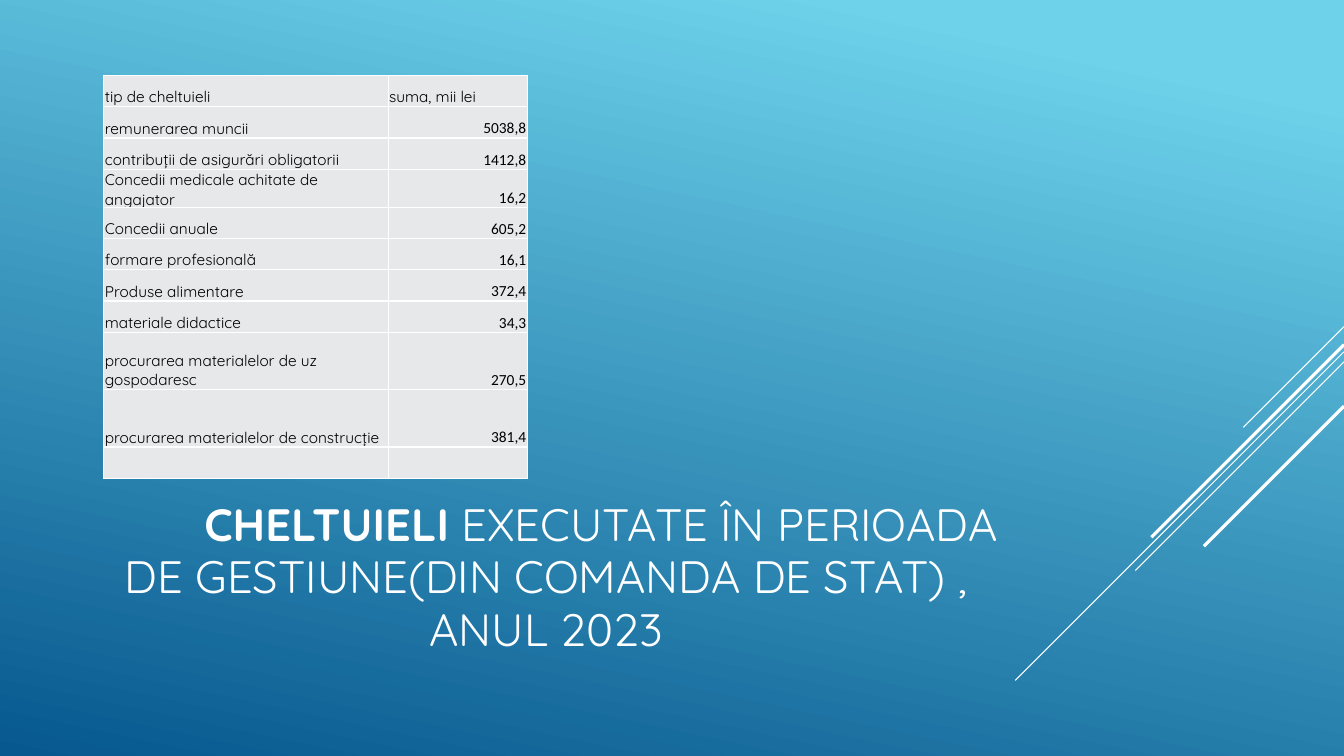
from lxml.etree import SubElement
from pptx import Presentation
from pptx.dml.color import RGBColor
from pptx.enum.shapes import MSO_CONNECTOR
from pptx.enum.text import MSO_ANCHOR, PP_ALIGN
from pptx.oxml.ns import qn
from pptx.util import Pt

PX = 9144
WHITE = RGBColor(0xFF, 0xFF, 0xFF)
BLACK = RGBColor(0, 0, 0)
CELL_GREY = RGBColor(0xE7, 0xE8, 0xEA)
SKY = RGBColor(0x6E, 0xD2, 0xEB)
DEEP_BLUE = RGBColor(0x06, 0x58, 0x8E)

EXPENSES = [
    ("tip de cheltuieli", "suma, mii lei"),
    ("remunerarea muncii", "5038,8"),
    ("contribuții de asigurări obligatorii", "1412,8"),
    ("Concedii medicale achitate de angajator", "16,2"),
    ("Concedii anuale", "605,2"),
    ("formare profesională", "16,1"),
    ("Produse alimentare", "372,4"),
    ("materiale didactice", "34,3"),
    ("procurarea materialelor de uz gospodaresc", "270,5"),
    ("procurarea materialelor de construcție", "381,4"),
    ("", ""),
]
COL_WIDTHS = [282, 138]
ROW_HEIGHT, TALL_ROW_HEIGHT = 31, 57
TALL_ROWS = (8, 9)
TITLE = [
    ("CHELTUIELI ", True),
    ("EXECUTATE ÎN PERIOADA DE GESTIUNE(DIN COMANDA DE STAT) , ANUL 2023", False),
]
RAYS = [(0, 100, 0.75), (25, 326, 0.75), (35, 207, 0.75), (18, 191, 2.25), (79, 139, 2.25)]


def set_format(target, values):
    for name, value in values.items():
        setattr(target, name, value)


def add_run(p, text, color, **font):
    r = p.add_run()
    r.text = text
    set_format(r.font, font)
    r.font.color.rgb = color


def paint_background(s):
    fill = s.background.fill
    fill.gradient()
    fill.gradient_angle = 258
    for stop, position, color in zip(fill.gradient_stops, (0.1, 1), (SKY, DEEP_BLUE)):
        stop.position = position
        stop.color.rgb = color


def add_rays(s, right, top):
    for drop, length, weight in RAYS:
        y = top + drop
        points = (right, y, right - length, y + length)
        line = s.shapes.add_connector(MSO_CONNECTOR.STRAIGHT, *(v * PX for v in points))
        line.line.color.rgb = WHITE
        line.line.width = Pt(weight)
        SubElement(line._element.spPr, qn("a:effectLst"))


def add_title(s, x, y, w, h):
    tf = s.shapes.add_textbox(x * PX, y * PX, w * PX, h * PX).text_frame
    set_format(tf, {"word_wrap": True, "vertical_anchor": MSO_ANCHOR.MIDDLE})
    p = tf.paragraphs[0]
    set_format(p, {"alignment": PP_ALIGN.CENTER, "line_spacing": 0.96})
    p._p.get_or_add_pPr().set("indent", str(109 * PX))
    for text, bold in TITLE:
        add_run(p, text, WHITE, size=Pt(32.4), name="Quicksand", bold=bold)


def add_borders(cell):
    tcPr = cell._tc.get_or_add_tcPr()
    for i, side in enumerate(("lnL", "lnR", "lnT", "lnB")):
        ln = tcPr.makeelement(qn(f"a:{side}"), {"w": str(Pt(1))})
        fill = SubElement(ln, qn("a:solidFill"))
        SubElement(fill, qn("a:srgbClr"), val=str(WHITE))
        tcPr.insert(i, ln)


def fill_cell(cell, text, is_amount):
    set_format(cell, {
        "margin_left": PX, "margin_right": PX, "margin_top": PX, "margin_bottom": 0,
        "vertical_anchor": MSO_ANCHOR.BOTTOM,
    })
    cell.fill.solid()
    cell.fill.fore_color.rgb = CELL_GREY
    add_borders(cell)
    p = cell.text_frame.paragraphs[0]
    p.alignment = PP_ALIGN.RIGHT if is_amount else PP_ALIGN.LEFT
    add_run(p, text, BLACK, size=Pt(11), bold=False,
            name="Calibri" if is_amount else "Quicksand")


def add_expense_table(s, x, y):
    heights = [TALL_ROW_HEIGHT if i in TALL_ROWS else ROW_HEIGHT for i in range(len(EXPENSES))]
    table = s.shapes.add_table(
        len(EXPENSES), len(COL_WIDTHS), x * PX, y * PX,
        sum(COL_WIDTHS) * PX, sum(heights) * PX,
    ).table
    set_format(table, {"first_row": False, "horz_banding": False})
    for column, width in zip(table.columns, COL_WIDTHS):
        column.width = width * PX
    for i, (row, height) in enumerate(zip(table.rows, heights)):
        row.height = height * PX
        for j, cell in enumerate(row.cells):
            fill_cell(cell, EXPENSES[i][j], i > 0 and j == 1)


def main():
    prs = Presentation()
    set_format(prs, {"slide_width": 1333 * PX, "slide_height": 750 * PX})
    s = prs.slides.add_slide(prs.slide_layouts[6])
    paint_background(s)
    add_rays(s, 1333, 324)
    add_title(s, 75, 491, 933, 165)
    add_expense_table(s, 103, 75)
    prs.save("out.pptx")


if __name__ == "__main__":
    main()
